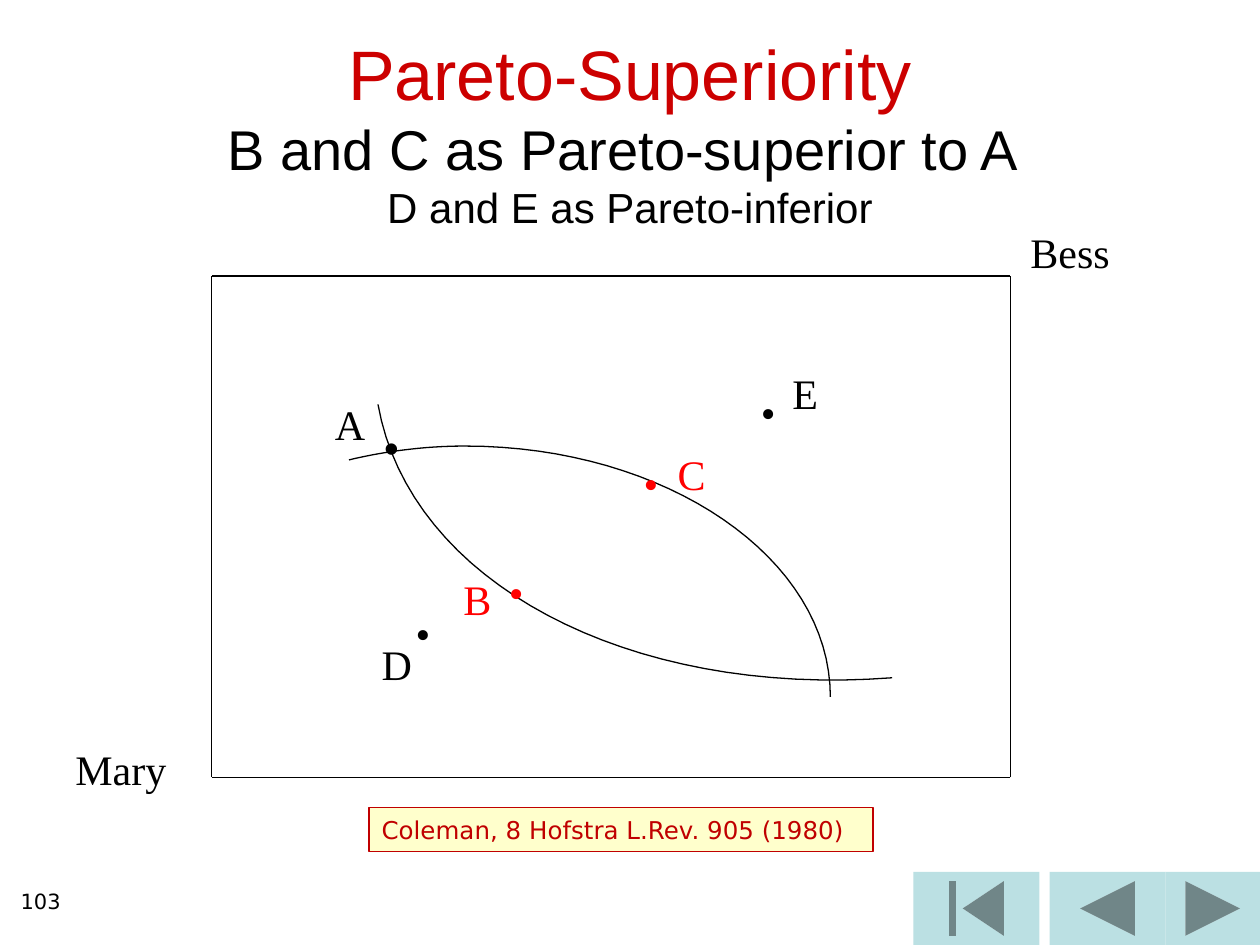
import pptx
import pptx.util
import pptx.dml.color
import pptx.enum.shapes
import pptx.enum.text
import pptx.oxml.ns
import lxml.etree

Inches = pptx.util.Inches
SHAPES = pptx.enum.shapes.MSO_SHAPE
ALIGN = pptx.enum.text.PP_ALIGN
ANCHOR = pptx.enum.text.MSO_ANCHOR

COLORS = {"black": "000000", "title": "CC0000", "red": "FF0000",
          "caption": "C00000", "cream": "FFFFCC", "button": "BBE0E3"}
SERIF, SANS, WIDE = "Times New Roman", "Arial", "DejaVu Sans"
SLIDE_WIDTH, SLIDE_HEIGHT = 10, 7.5
ROW = 0.5  # height of a one-line label

TITLE_LINES = [
    ("Pareto-Superiority", 40, "title"),
    ("B and C as Pareto-superior to A ", 32, "black"),
    ("D and E as Pareto-inferior", 24, "black"),
]
# text, left, top, width, color, font
LABELS = [
    ("Mary", 0.5, 5.85, 1.53, "black", SERIF),
    ("Bess", 8.08, 1.75, 0.9, "black", SERIF),
    ("A", 2.56, 3.11, 0.44, "black", SERIF),
    ("B", 3.58, 4.5, 0.46, "red", SERIF),
    ("C", 5.28, 3.51, 0.42, "red", SERIF),
    ("D", 2.93, 5.02, 0.44, "black", SERIF),
    ("E", 6.19, 2.87, 0.4, "black", SERIF),
    ("•", 2.95, 3.3, 0.27, "black", SANS),
    ("•", 3.94, 4.45, 0.46, "red", SERIF),
    ("•", 5.01, 3.58, 0.35, "red", SERIF),
    ("•", 3.2, 4.77, 0.35, "black", SERIF),
    ("•", 5.94, 3.02, 0.27, "black", SERIF),
]
BOX_CORNERS = [(1.68, 6.17), (8.02, 6.17), (8.02, 2.19), (1.68, 2.19)]
# each curve is a chain of cubic segments: start, then control, control, end
CURVES = [
    [(2.77, 3.65), (3.06, 3.58), (3.38, 3.54), (3.69, 3.54),
     (5.29, 3.54), (6.59, 4.43), (6.59, 5.53)],
    [(7.08, 5.38), (4.98, 5.54), (3.25, 4.62), (3, 3.21)],
]
CURVE_STEPS = 32
BUTTON_HEIGHT = 0.58
BUTTONS = [
    (SHAPES.ACTION_BUTTON_BEGINNING, 7.25, 1),
    (SHAPES.ACTION_BUTTON_BACK_OR_PREVIOUS, 8.33, 0.92),
    (SHAPES.ACTION_BUTTON_FORWARD_OR_NEXT, 9.25, 0.75),
]


def rgb(name):
    return pptx.dml.color.RGBColor.from_string(COLORS[name])


def set_attributes(target, values):
    for name, value in values.items():
        setattr(target, name, value)


def style_font(font, size, color, name):
    set_attributes(font, {"size": pptx.util.Pt(size), "name": name})
    font.color.rgb = rgb(color)


def style_line(line, color="black"):
    line.color.rgb = rgb(color)
    line.width = pptx.util.Pt(0.75)


def write_text(shape, lines, font_name, align=ALIGN.LEFT, anchor=ANCHOR.TOP):
    """Write the lines as one paragraph with line breaks between them."""
    set_attributes(shape.text_frame, {"word_wrap": True, "vertical_anchor": anchor})
    paragraph = shape.text_frame.paragraphs[0]
    paragraph.alignment = align
    for index, (text, size, color) in enumerate(lines):
        if index:
            paragraph.add_line_break()
        run = paragraph.add_run()
        run.text = text
        style_font(run.font, size, color, font_name)


def add_text(slide, place, *text_format):
    shape = slide.shapes.add_textbox(*map(Inches, place))
    write_text(shape, *text_format)


def add_filled_shape(slide, kind, place, fill):
    shape = slide.shapes.add_shape(kind, *map(Inches, place))
    shape.shadow.inherit = False
    shape.fill.solid()
    shape.fill.fore_color.rgb = rgb(fill)
    shape.line.fill.background()
    return shape


def add_line(slide, start, end):
    connector = slide.shapes.add_connector(
        pptx.enum.shapes.MSO_CONNECTOR.STRAIGHT, *map(Inches, start + end))
    style_line(connector.line)
    lxml.etree.SubElement(connector.element.spPr, pptx.oxml.ns.qn("a:effectLst"))


def cubic_point(controls, t):
    weights = ((1 - t) ** 3, 3 * t * (1 - t) ** 2, 3 * t ** 2 * (1 - t), t ** 3)
    return tuple(sum(w * c for w, c in zip(weights, axis)) for axis in zip(*controls))


def add_curve(slide, controls):
    points = [controls[0]]
    for first in range(0, len(controls) - 1, 3):
        segment = controls[first:first + 4]
        points += [cubic_point(segment, step / CURVE_STEPS)
                   for step in range(1, CURVE_STEPS + 1)]
    # the builder rounds to whole units, so the points are given in EMU
    start, *rest = [tuple(map(Inches, point)) for point in points]
    builder = slide.shapes.build_freeform(*start)
    builder.add_line_segments(rest, close=False)
    shape = builder.convert_to_shape()
    shape.shadow.inherit = False
    shape.fill.background()
    style_line(shape.line)


def main():
    presentation = pptx.Presentation()
    set_attributes(presentation, {"slide_width": Inches(SLIDE_WIDTH),
                                  "slide_height": Inches(SLIDE_HEIGHT)})
    slide = presentation.slides.add_slide(presentation.slide_layouts[6])

    for kind, left, width in BUTTONS:
        place = (left, SLIDE_HEIGHT - BUTTON_HEIGHT, width, BUTTON_HEIGHT)
        add_filled_shape(slide, kind, place, "button")
    add_text(slide, (0, SLIDE_HEIGHT - ROW, 0.58, ROW),
             [("103", 12, "black")], WIDE, ALIGN.RIGHT)
    add_text(slide, (0.75, 0.25, SLIDE_WIDTH - 2 * 0.75, 1.58),
             TITLE_LINES, SANS, ALIGN.CENTER, ANCHOR.MIDDLE)

    for start, end in zip(BOX_CORNERS, BOX_CORNERS[1:] + BOX_CORNERS[:1]):
        add_line(slide, start, end)
    for controls in CURVES:
        add_curve(slide, controls)
    for text, left, top, width, color, font_name in LABELS:
        add_text(slide, (left, top, width, ROW), [(text, 24, color)], font_name)

    caption = add_filled_shape(slide, SHAPES.RECTANGLE, (2.93, 6.41, 4, 0.35), "cream")
    style_line(caption.line, "caption")
    write_text(caption, [("Coleman, 8 Hofstra L.Rev. 905 (1980)", 14, "caption")],
               WIDE, ALIGN.LEFT, ANCHOR.MIDDLE)

    presentation.save("out.pptx")


if __name__ == "__main__":
    main()
